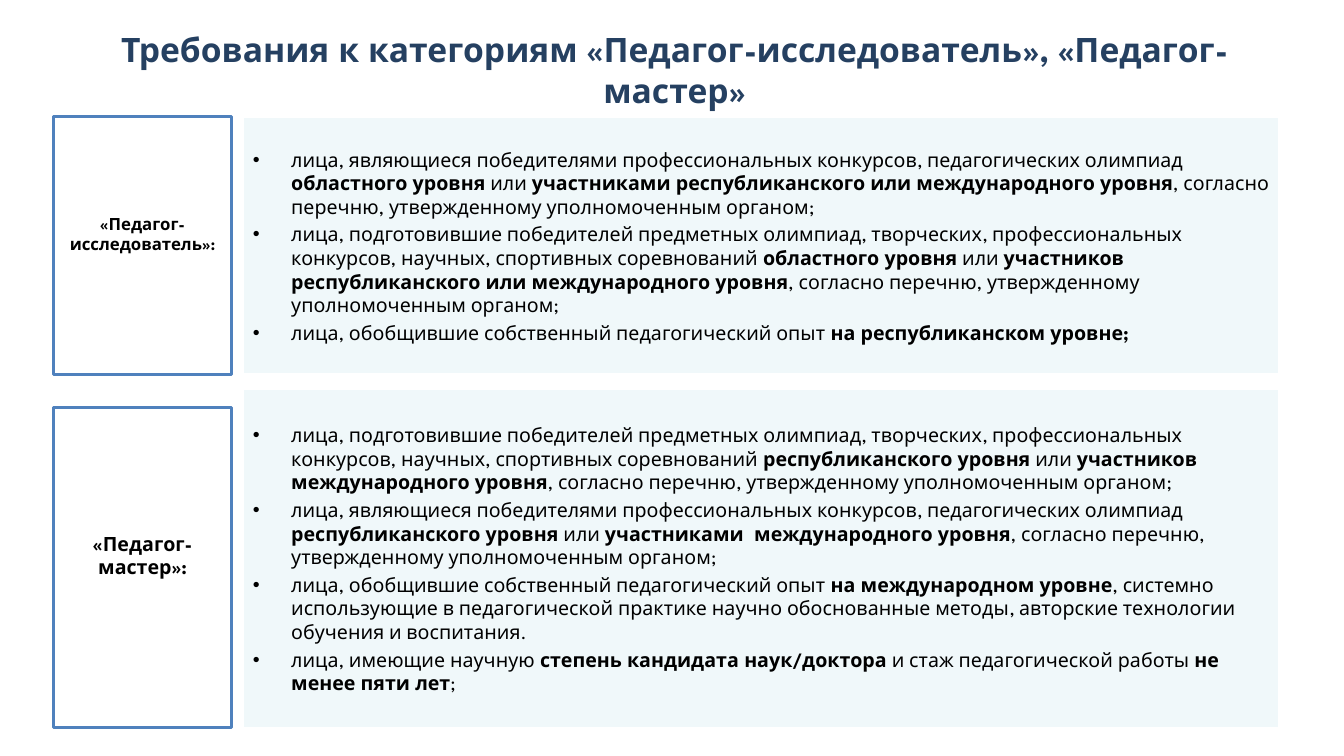
from dataclasses import dataclass

from lxml import etree
from pptx import Presentation
from pptx.dml.color import RGBColor
from pptx.enum.shapes import MSO_SHAPE
from pptx.enum.text import MSO_ANCHOR, PP_ALIGN
from pptx.oxml.ns import qn
from pptx.shapes.autoshape import Shape
from pptx.slide import Slide
from pptx.text.text import _Paragraph
from pptx.util import Inches, Pt

RECTANGLE = MSO_SHAPE.RECTANGLE
MIDDLE = MSO_ANCHOR.MIDDLE
CENTER = PP_ALIGN.CENTER
LEFT = PP_ALIGN.LEFT


@dataclass(frozen=True)
class Theme:
    font: str = "League Spartan"
    title: RGBColor = RGBColor(0x25, 0x40, 0x61)
    text: RGBColor = RGBColor(0x00, 0x00, 0x00)
    white: RGBColor = RGBColor(0xFF, 0xFF, 0xFF)
    panel: RGBColor = RGBColor(0xF0, 0xF8, 0xFA)
    border: RGBColor = RGBColor(0x4F, 0x81, 0xBD)
    title_size: int = 24
    body_size: int = 14
    small_size: int = 12
    line_width: int = 2


@dataclass(frozen=True)
class Run:
    text: str
    bold: bool = False


@dataclass(frozen=True)
class Category:
    label: str
    label_size: int
    label_top: float
    label_height: float
    panel_top: float
    panel_height: float
    requirements: list[list[Run]]


THEME = Theme()
LABEL_LEFT, LABEL_WIDTH = 0.53, 1.77
PANEL_LEFT, PANEL_WIDTH = 2.41, 10.28
LABEL_BOTTOM_MARGIN = 0.29
BULLET_INDENT = 0.38

WINNERS = Run("лица, являющиеся победителями профессиональных конкурсов, педагогических олимпиад ")
MENTORS = Run(
    "лица, подготовившие победителей предметных олимпиад, творческих, профессиональных "
    "конкурсов, научных, спортивных соревнований "
)
EXPERIENCE = Run("лица, обобщившие собственный педагогический опыт ")
OR = Run(" или ")
APPROVED_LIST = Run(", согласно перечню, утвержденному уполномоченным органом;")
REGIONAL = Run("областного уровня", True)
NATIONAL = Run("республиканского уровня", True)

CATEGORIES = [
    Category("«Педагог-исследователь»:", THEME.small_size, 1.16, 2.56, 1.16, 2.56, [
        [WINNERS, REGIONAL, OR,
         Run("участниками республиканского или международного уровня", True), APPROVED_LIST],
        [MENTORS, REGIONAL, OR,
         Run("участников республиканского или международного уровня", True), APPROVED_LIST],
        [EXPERIENCE, Run("на республиканском уровне;", True)],
    ]),
    Category("«Педагог-мастер»:", THEME.body_size, 4.04, 3.18, 3.86, 3.37, [
        [MENTORS, NATIONAL, OR, Run("участников международного уровня", True), APPROVED_LIST],
        [WINNERS, NATIONAL, OR, Run("участниками  международного уровня", True), APPROVED_LIST],
        [EXPERIENCE, Run("на международном уровне", True),
         Run(", системно использующие в педагогической практике научно обоснованные методы, "
             "авторские технологии обучения и воспитания.")],
        [Run("лица, имеющие научную "), Run("степень кандидата наук/доктора", True),
         Run(" и стаж педагогической работы "), Run("не менее пяти лет", True), Run(";")],
    ]),
]


def style_paragraph(paragraph: _Paragraph, size: int, color: RGBColor, alignment: PP_ALIGN) -> None:
    paragraph.alignment = alignment
    paragraph.font.name = THEME.font
    paragraph.font.size = Pt(size)
    paragraph.font.color.rgb = color


def add_bullet(paragraph: _Paragraph) -> None:
    properties = paragraph._p.get_or_add_pPr()
    properties.set("marL", str(Inches(BULLET_INDENT)))
    properties.set("indent", str(-Inches(BULLET_INDENT)))
    etree.SubElement(properties, qn("a:buFont")).set("typeface", "Arial")
    etree.SubElement(properties, qn("a:buChar")).set("char", "•")


def add_box(slide: Slide, left: float, top: float, width: float, height: float,
            fill: RGBColor, line: RGBColor) -> Shape:
    shape = slide.shapes.add_shape(
        RECTANGLE, Inches(left), Inches(top), Inches(width), Inches(height))
    shape.shadow.inherit = False
    shape.fill.solid()
    shape.fill.fore_color.rgb = fill
    shape.line.color.rgb = line
    shape.line.width = Pt(THEME.line_width)
    shape.text_frame.word_wrap = True
    shape.text_frame.vertical_anchor = MIDDLE
    return shape


def add_title(slide: Slide, text: str) -> None:
    shape = slide.shapes.add_textbox(Inches(0.69), Inches(0.35), Inches(12), Inches(0.68))
    frame = shape.text_frame
    frame.word_wrap = True
    frame.vertical_anchor = MIDDLE
    frame.text = text
    paragraph = frame.paragraphs[0]
    style_paragraph(paragraph, THEME.title_size, THEME.title, CENTER)
    paragraph.font.bold = True


def add_label(slide: Slide, category: Category) -> None:
    shape = add_box(slide, LABEL_LEFT, category.label_top, LABEL_WIDTH,
                    category.label_height, THEME.white, THEME.border)
    frame = shape.text_frame
    frame.margin_bottom = Inches(LABEL_BOTTOM_MARGIN)
    frame.text = category.label
    paragraph = frame.paragraphs[0]
    style_paragraph(paragraph, category.label_size, THEME.text, CENTER)
    paragraph.font.bold = True


def add_requirements(slide: Slide, category: Category) -> None:
    shape = add_box(slide, PANEL_LEFT, category.panel_top, PANEL_WIDTH,
                    category.panel_height, THEME.panel, THEME.white)
    frame = shape.text_frame
    for index, requirement in enumerate(category.requirements):
        paragraph = frame.add_paragraph() if index else frame.paragraphs[0]
        paragraph.space_before = Pt(3)
        add_bullet(paragraph)
        style_paragraph(paragraph, THEME.body_size, THEME.text, LEFT)
        for part in requirement:
            run = paragraph.add_run()
            run.text = part.text
            run.font.bold = part.bold


def main() -> None:
    presentation = Presentation()
    presentation.slide_width = Inches(13.33)
    presentation.slide_height = Inches(7.5)
    slide = presentation.slides.add_slide(presentation.slide_layouts[6])
    add_title(slide, "Требования к категориям «Педагог-исследователь», «Педагог-мастер»")
    for category in CATEGORIES:
        add_requirements(slide, category)
        add_label(slide, category)
    presentation.save("out.pptx")


if __name__ == "__main__":
    main()
